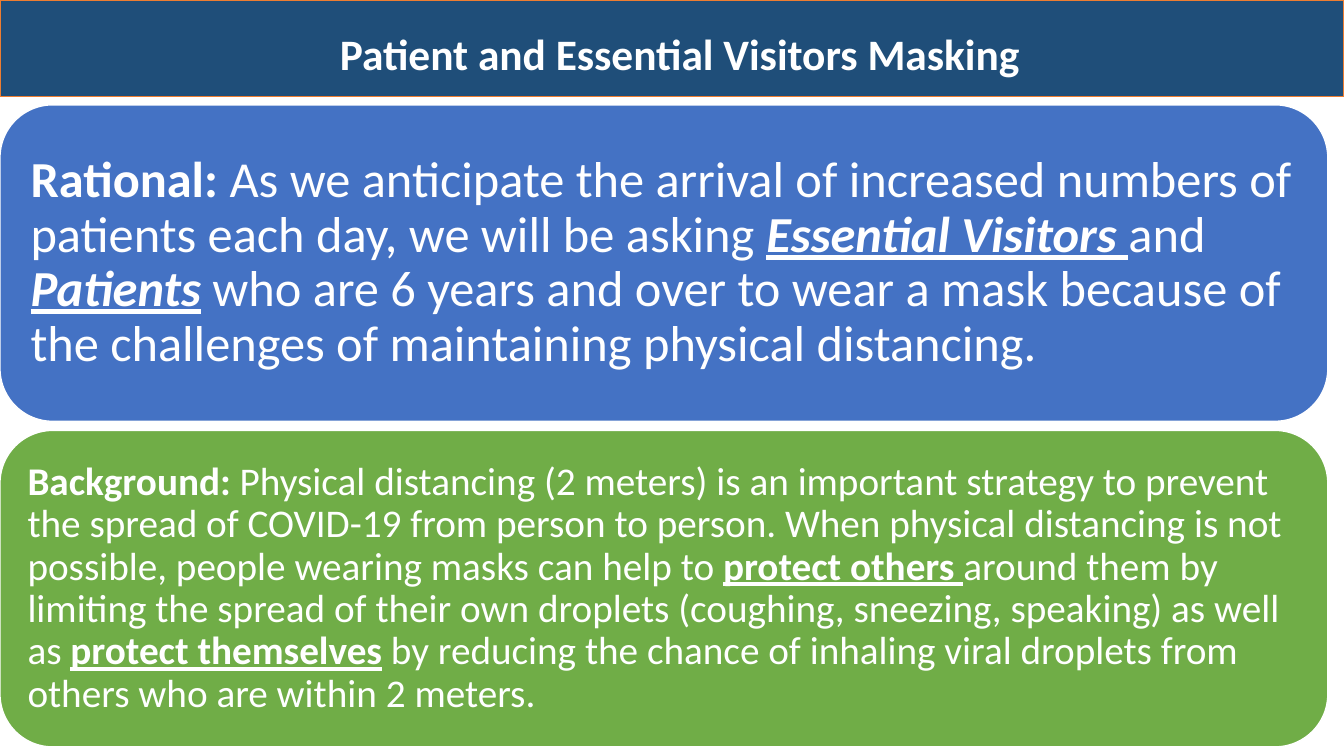
from dataclasses import dataclass

from pptx import Presentation
from pptx.dml.color import RGBColor
from pptx.enum.shapes import MSO_SHAPE
from pptx.enum.text import MSO_ANCHOR, MSO_AUTO_SIZE, PP_ALIGN
from pptx.util import Inches, Pt

COLOURS = {
    "white": "FFFFFF",
    "navy": "1F4E79",
    "orange": "ED7D31",
    "blue": "4472C4",
    "green": "70AD47",
}
FONT = "Calibri"
PLAIN = {"bold": False}
BOLD = {"bold": True}
UNDERLINED = {"bold": True, "underline": True}
EMPHASIS = {"bold": True, "italic": True, "underline": True}
PANEL_TOP, PANEL_WIDTH, PANEL_HEIGHT, PANEL_GAP = 1.04, 13.17, 3.14, 0.09


@dataclass
class Span:
    text: str
    style: dict


@dataclass
class Panel:
    fill: str
    size: float
    margin: float
    spans: list[Span]


PANELS = [
    Panel("blue", 36, 0.15, [
        Span("Rational: ", BOLD),
        Span("As we anticipate the arrival of increased numbers of patients "
             "each day, we will be asking ", PLAIN),
        Span("Essential Visitors ", EMPHASIS),
        Span("and ", PLAIN),
        Span("Patients", EMPHASIS),
        Span(" who are 6 years and over to wear a mask because of the "
             "challenges of maintaining physical distancing.", PLAIN),
    ]),
    Panel("green", 28, 0.12, [
        Span("Background: ", BOLD),
        Span("Physical distancing (2 meters) is an important strategy to "
             "prevent the spread of COVID-19 from person to person. When "
             "physical distancing is not possible, people wearing masks can "
             "help to ", PLAIN),
        Span("protect others ", UNDERLINED),
        Span("around them by limiting the spread of their own droplets "
             "(coughing, sneezing, speaking) as well as ", PLAIN),
        Span("protect themselves", UNDERLINED),
        Span(" by reducing the chance of inhaling viral droplets from others "
             "who are within 2 meters.", PLAIN),
    ]),
]


def colour(name: str) -> RGBColor:
    return RGBColor.from_string(COLOURS[name])


def set_all(target, values: dict) -> None:
    for name, value in values.items():
        setattr(target, name, value)


def paint(shape, fill: str, line: str) -> None:
    shape.fill.solid()
    shape.fill.fore_color.rgb = colour(fill)
    shape.line.color.rgb = colour(line)
    shape.line.width = Pt(1)


def add_span(para, span: Span, size: float) -> None:
    run = para.add_run()
    run.text = span.text
    set_all(run.font, {"name": FONT, "size": Pt(size), **span.style})
    run.font.color.rgb = colour("white")


def format_title(title) -> None:
    set_all(title, {"left": 0, "top": 0, "width": Inches(13.33),
                    "height": Inches(0.96)})
    paint(title, "navy", "orange")
    set_all(title.text_frame, {"vertical_anchor": MSO_ANCHOR.MIDDLE,
                               "auto_size": MSO_AUTO_SIZE.NONE,
                               "word_wrap": True})
    para = title.text_frame.paragraphs[0]
    set_all(para, {"alignment": PP_ALIGN.CENTER, "line_spacing": 0.9})
    add_span(para, Span(" ", BOLD), 48)
    add_span(para, Span("Patient and Essential Visitors Masking", BOLD), 31)


def add_panel(page, panel: Panel, top: float) -> None:
    box = page.shapes.add_shape(
        MSO_SHAPE.ROUNDED_RECTANGLE, 0, Inches(top),
        Inches(PANEL_WIDTH), Inches(PANEL_HEIGHT))
    box.shadow.inherit = False
    paint(box, panel.fill, "white")
    margin = Inches(panel.margin)
    set_all(box.text_frame, {
        "word_wrap": True, "vertical_anchor": MSO_ANCHOR.MIDDLE,
        "margin_left": margin, "margin_right": margin,
        "margin_top": margin, "margin_bottom": margin})
    para = box.text_frame.paragraphs[0]
    set_all(para, {"alignment": PP_ALIGN.LEFT, "line_spacing": 0.9})
    for span in panel.spans:
        add_span(para, span, panel.size)


def main() -> None:
    deck = Presentation()
    set_all(deck, {"slide_width": Inches(13.33), "slide_height": Inches(7.5)})
    page = deck.slides.add_slide(deck.slide_layouts.get_by_name("Title Only"))
    format_title(page.shapes.title)
    for index, panel in enumerate(PANELS):
        add_panel(page, panel, PANEL_TOP + index * (PANEL_HEIGHT + PANEL_GAP))
    deck.save("out.pptx")


if __name__ == "__main__":
    main()
